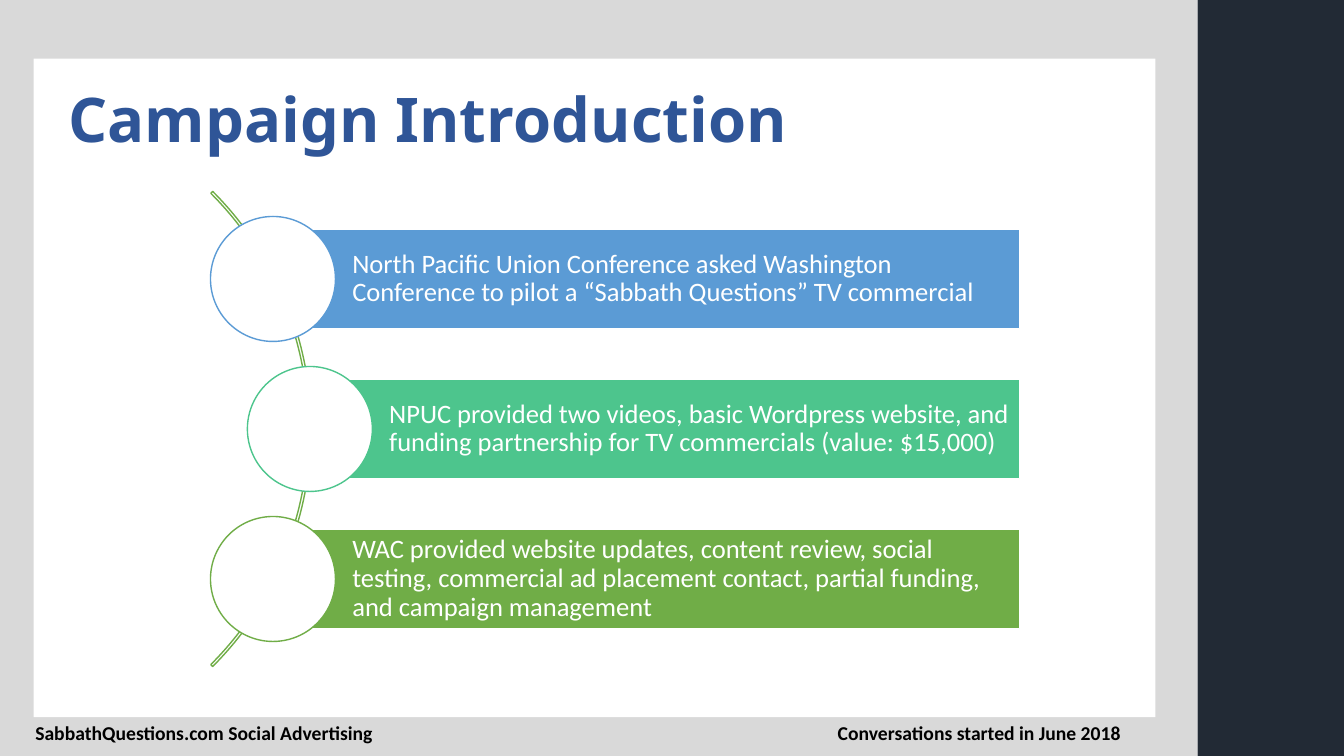
from pptx import Presentation
from pptx.dml.color import RGBColor
from pptx.enum.shapes import MSO_SHAPE
from pptx.enum.text import MSO_ANCHOR, MSO_AUTO_SIZE, PP_ALIGN
from pptx.util import Cm, Pt

RECT, OVAL, ARC = MSO_SHAPE.RECTANGLE, MSO_SHAPE.OVAL, MSO_SHAPE.BLOCK_ARC
TOP, MIDDLE = MSO_ANCHOR.TOP, MSO_ANCHOR.MIDDLE
LEFT, RIGHT = PP_ALIGN.LEFT, PP_ALIGN.RIGHT
NO_AUTOFIT = MSO_AUTO_SIZE.NONE
TITLE_ONLY = 5

WHITE, GREEN = "FFFFFF", "70AD47"
PANELS = [
    (0, 0, 30.18, 19.05, "D9D9D9"),
    (0.85, 1.48, 28.27, 16.59, WHITE),
    (30.18, 0, 3.69, 19.05, "222A35"),
]
STEPS = [
    (6.88, "5B9BD5", "North Pacific Union Conference asked Washington Conference "
     "to pilot a “Sabbath Questions” TV commercial"),
    (7.81, "4DC58D", "NPUC provided two videos, basic Wordpress website, and "
     "funding partnership for TV commercials (value: $15,000)"),
    (6.88, GREEN, "WAC provided website updates, content review, social testing, "
     "commercial ad placement contact, partial funding, and campaign management"),
]
FOOTERS = [
    (15.24, "Conversations started in June 2018", RIGHT),
    (0.64, "SabbathQuestions.com Social Advertising", LEFT),
]
FIRST_CENTRE, STEP_PITCH = 7.03, 3.78
BAR_RIGHT, BAR_HEIGHT, CIRCLE_SIZE = 25.7, 2.51, 3.15
ARC_LEFT, ARC_SIZE = -9.09, 16.93


def colour(hex_code):
    return RGBColor.from_string(hex_code)


def write(holder, words, size, ink, font="Calibri", bold=False, align=LEFT,
          anchor=TOP, spacing=1.0, insets=(0.25, 0.13, 0.25, 0.13)):
    """Insets run left, top, right, bottom, in centimetres."""
    frame = holder.text_frame
    frame.word_wrap = True
    frame.auto_size = NO_AUTOFIT
    frame.vertical_anchor = anchor
    (frame.margin_left, frame.margin_top,
     frame.margin_right, frame.margin_bottom) = map(Cm, insets)
    frame.text = words
    paragraph = frame.paragraphs[0]
    paragraph.alignment = align
    paragraph.line_spacing = spacing
    style = paragraph.runs[0].font
    style.name, style.size, style.bold = font, Pt(size), bold
    style.color.rgb = colour(ink)


def add_figure(slide, kind, left, top, width, height, fill=None, line=None):
    figure = slide.shapes.add_shape(kind, Cm(left), Cm(top), Cm(width), Cm(height))
    figure.shadow.inherit = False
    if fill:
        figure.fill.solid()
        figure.fill.fore_color.rgb = colour(fill)
    else:
        figure.fill.background()
    if line:
        figure.line.color.rgb = colour(line)
        figure.line.width = Pt(1)
    else:
        figure.line.fill.background()
    return figure


def add_title(slide, words):
    title = slide.shapes.title
    title.left, title.top, title.width, title.height = map(Cm, (1.47, 1.48, 26.77, 3.2))
    write(title, words, 44, "2F5597", font="Noto Sans", bold=True,
          anchor=MIDDLE, spacing=0.9)


def add_backdrop(slide):
    """Panels go behind the title."""
    for *box, fill in PANELS:
        panel = add_figure(slide, RECT, *box, fill=fill)
        slide.shapes.title.element.addprevious(panel.element)


def add_arc(slide):
    centre = FIRST_CENTRE + STEP_PITCH
    arc = add_figure(slide, ARC, ARC_LEFT, centre - ARC_SIZE / 2,
                     ARC_SIZE, ARC_SIZE, line=GREEN)
    for index, value in enumerate((189, 27, 0.004)):
        arc.adjustments[index] = value


def add_step(slide, left, centre, accent, words):
    bar = add_figure(slide, RECT, left, centre - BAR_HEIGHT / 2,
                     BAR_RIGHT - left, BAR_HEIGHT, fill=accent, line=WHITE)
    write(bar, words, 19, WHITE, anchor=MIDDLE, spacing=0.9,
          insets=(2.0, 0.13, 0.13, 0.13))
    add_figure(slide, OVAL, left - CIRCLE_SIZE / 2, centre - CIRCLE_SIZE / 2,
               CIRCLE_SIZE, CIRCLE_SIZE, fill=WHITE, line=accent)


def add_footer(slide, left, words, align):
    footer = slide.shapes.add_textbox(Cm(left), Cm(18.03), Cm(13.26), Cm(0.86))
    write(footer, words, 14, "000000", bold=True, align=align)


def main():
    deck = Presentation()
    deck.slide_width, deck.slide_height = Cm(33.87), Cm(19.05)
    slide = deck.slides.add_slide(deck.slide_layouts[TITLE_ONLY])
    add_title(slide, "Campaign Introduction")
    add_backdrop(slide)
    add_arc(slide)
    for row, (left, accent, words) in enumerate(STEPS):
        add_step(slide, left, FIRST_CENTRE + row * STEP_PITCH, accent, words)
    for footer in FOOTERS:
        add_footer(slide, *footer)
    deck.save("out.pptx")


if __name__ == "__main__":
    main()
